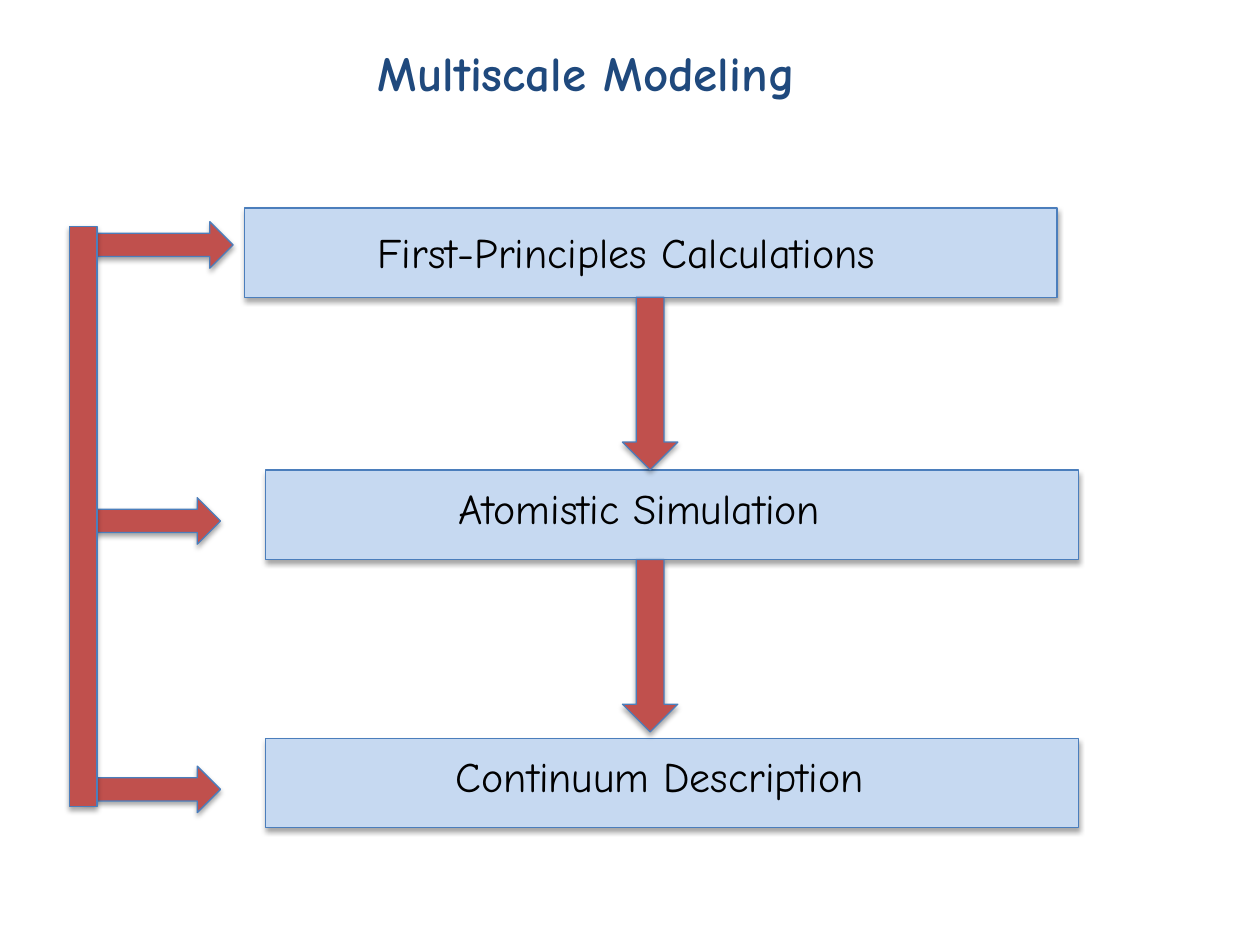
"""Build the multiscale modeling slide."""
from lxml import etree
from pptx import Presentation
from pptx.dml.color import RGBColor
from pptx.enum import shapes as es, text as et
from pptx.oxml import ns
from pptx.util import Pt

NAVY = RGBColor(0x1F, 0x49, 0x7D)
PALE = RGBColor(0xC6, 0xD9, 0xF1)
BLUE = RGBColor(0x4B, 0x7E, 0xBC)
RED = RGBColor(0xC0, 0x50, 0x4D)
BLACK = RGBColor(0, 0, 0)
FONT = "Comic Neue"
KIND = es.MSO_SHAPE
LEVELS = [
    ("First-Principles Calculations", 139.7, 118.8, 208.8, 126, 329),
    ("Atomistic Simulation", 151.9, 268.6, 254.9, 272.2, 249.1),
    ("Continuum Description", 151.9, 421.9, 253.4, 425.5, 267.1),
]


def add_shade(shape):
    """Give the shape a soft shadow that falls straight down."""
    shape.shadow.inherit = False
    effects = shape._element.spPr.find(ns.qn("a:effectLst"))
    shade = etree.SubElement(
        effects, ns.qn("a:outerShdw"), blurRad=str(Pt(3.1)),
        dist=str(Pt(1.8)), dir="5400000", rotWithShape="0")
    color = etree.SubElement(shade, ns.qn("a:srgbClr"), val="000000")
    etree.SubElement(color, ns.qn("a:alpha"), val="35000")


def add_block(slide, kind, box, fill):
    """Add a filled, outlined and shaded preset shape."""
    shape = slide.shapes.add_shape(kind, *map(Pt, box))
    shape.fill.solid()
    shape.fill.fore_color.rgb = fill
    shape.line.color.rgb = BLUE
    shape.line.width = Pt(0.75)
    add_shade(shape)


def add_label(slide, words, box, size, color, bold=False, wrap=False):
    """Add one line of text that sizes its own frame."""
    frame = slide.shapes.add_textbox(*map(Pt, box)).text_frame
    frame.word_wrap = wrap
    frame.auto_size = et.MSO_AUTO_SIZE.SHAPE_TO_FIT_TEXT
    frame.text = words
    font = frame.paragraphs[0].runs[0].font
    font.name, font.size, font.bold = FONT, Pt(size), bold
    font.color.rgb = color


def main():
    """Build and save the slide."""
    deck = Presentation()
    deck.slide_width, deck.slide_height = Pt(720), Pt(540)
    slide = deck.slides.add_slide(deck.slide_layouts[6])
    add_label(slide, "Multiscale Modeling", (208.8, 20.9, 357.1, 41), 28,
              NAVY, bold=True, wrap=True)
    for _, left, top, *_ in LEVELS:
        add_block(slide, KIND.RECTANGLE, (left, top, 464.4, 51.1), PALE)
    for words, _, _, left, top, width in LEVELS:
        add_label(slide, words, (left, top, width, 36), 24, BLACK)
    for _, _, top, *_ in LEVELS[:-1]:
        add_block(slide, KIND.DOWN_ARROW, (355.7, top + 51.1, 31.7, 98.6), RED)
    for left, top in ((47.5, 437.8), (47.5, 284.4), (54.7, 126.7)):
        add_block(slide, KIND.RIGHT_ARROW, (left, top, 78.5, 26.6), RED)
    add_block(slide, KIND.RECTANGLE, (39.6, 129.6, 15.8, 331.2), RED)
    deck.save("out.pptx")


if __name__ == "__main__":
    main()
